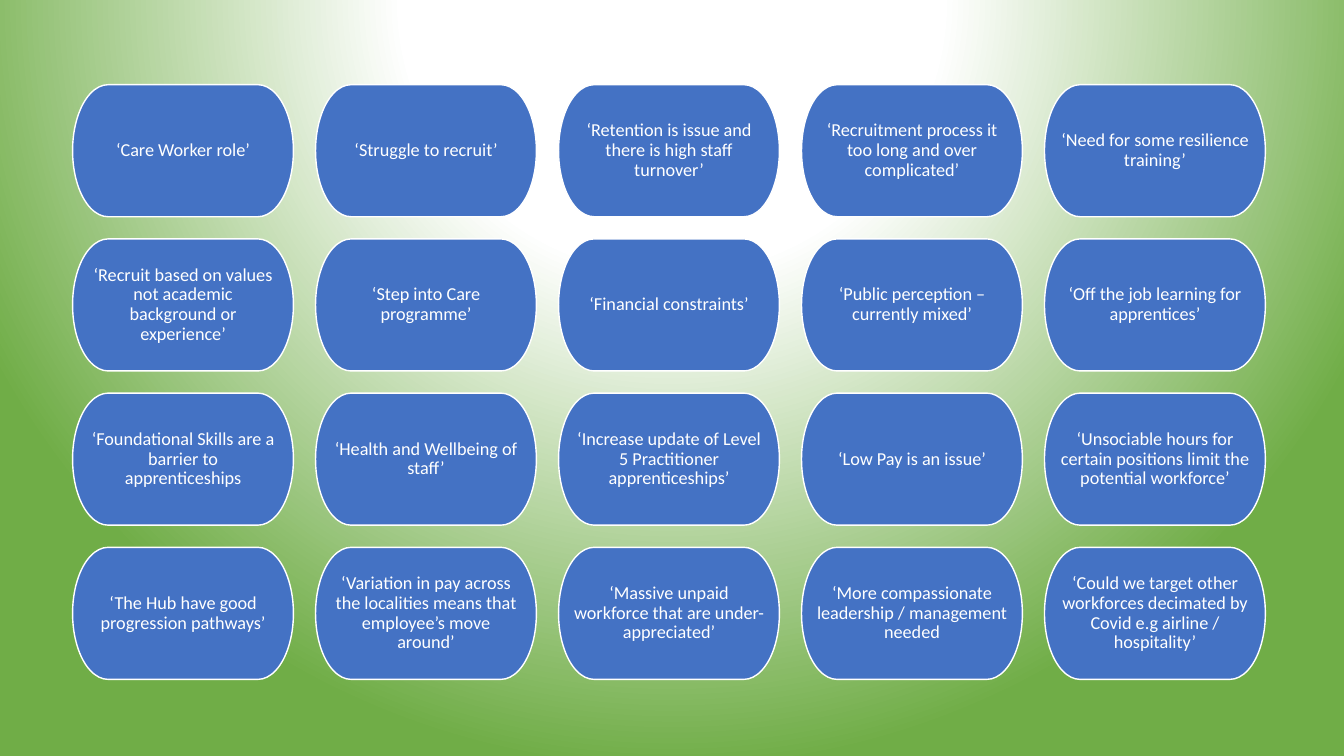
from pptx import Presentation
from pptx.dml.color import RGBColor
from pptx.enum.shapes import MSO_SHAPE
from pptx.enum.text import MSO_ANCHOR, PP_ALIGN
from pptx.oxml import parse_xml
from pptx.oxml.ns import nsdecls
from pptx.util import Inches, Pt

TERMINATOR = MSO_SHAPE.FLOWCHART_TERMINATOR
MIDDLE = MSO_ANCHOR.MIDDLE
CENTER = PP_ALIGN.CENTER

LEFT, TOP = 0.72, 0.84
CARD_W, CARD_H = 2.19, 1.31
GAP = 0.22
COLUMNS = 5

COMMENTS = [
    "‘Care Worker role’",
    "‘Struggle to recruit’",
    "‘Retention is issue and there is high staff turnover’",
    "‘Recruitment process it too long and over complicated’",
    "‘Need for some resilience training’",
    "‘Recruit based on values not academic background or experience’",
    "‘Step into Care programme’",
    "‘Financial constraints’",
    "‘Public perception – currently mixed’",
    "‘Off the job learning for apprentices’",
    "‘Foundational Skills are a barrier to apprenticeships",
    "‘Health and Wellbeing of staff’",
    "‘Increase update of Level 5 Practitioner apprenticeships’",
    "‘Low Pay is an issue’",
    "‘Unsociable hours for certain positions limit the potential workforce’",
    "‘The Hub have good progression pathways’",
    "‘Variation in pay across the localities means that employee’s move around’",
    "‘Massive unpaid workforce that are under-appreciated’",
    "‘More compassionate leadership / management needed",
    "‘Could we target other workforces decimated by Covid e.g airline / hospitality’",
]


def rgb(color):
    return RGBColor.from_string(color)


prs = Presentation()
prs.slide_width, prs.slide_height = Inches(13.33), Inches(7.5)
s = prs.slides.add_slide(prs.slide_layouts[6])

# Background: white glow from above the slide, fading to green
s.background.fill.solid()
solid = s.element.xpath("./p:cSld/p:bg/p:bgPr/a:solidFill")[0]
stops = "".join(
    f'<a:gs pos="{share * 1000}"><a:srgbClr val="{color}"/></a:gs>'
    for share, color in [(0, "FFFFFF"), (35, "FFFFFF"), (100, "70AD47")]
)
solid.getparent().replace(solid, parse_xml(
    f'<a:gradFill {nsdecls("a")} rotWithShape="1"><a:gsLst>{stops}</a:gsLst>'
    '<a:path path="circle">'
    '<a:fillToRect l="50000" t="-80000" r="50000" b="180000"/>'
    '</a:path></a:gradFill>'
))

# Grid of comment cards
cards = s.shapes.add_group_shape()
for i, comment in enumerate(COMMENTS):
    row, col = divmod(i, COLUMNS)
    sp = cards.shapes.add_shape(
        TERMINATOR,
        Inches(LEFT + col * (CARD_W + GAP)), Inches(TOP + row * (CARD_H + GAP)),
        Inches(CARD_W), Inches(CARD_H),
    )
    sp.shadow.inherit = False
    sp.fill.solid()
    sp.fill.fore_color.rgb = rgb("4472C4")
    sp.line.color.rgb = rgb("FFFFFF")
    sp.line.width = Pt(1)

    tf = sp.text_frame
    tf.word_wrap = True
    tf.vertical_anchor = MIDDLE
    tf.margin_left = tf.margin_right = Inches(0.05)
    tf.margin_top = tf.margin_bottom = Inches(0.05)
    p = tf.paragraphs[0]
    p.alignment = CENTER
    p.line_spacing = 0.9
    r = p.add_run()
    r.text = comment
    r.font.name = "Calibri"
    r.font.size = Pt(13)
    r.font.color.rgb = rgb("FFFFFF")

prs.save("out.pptx")
